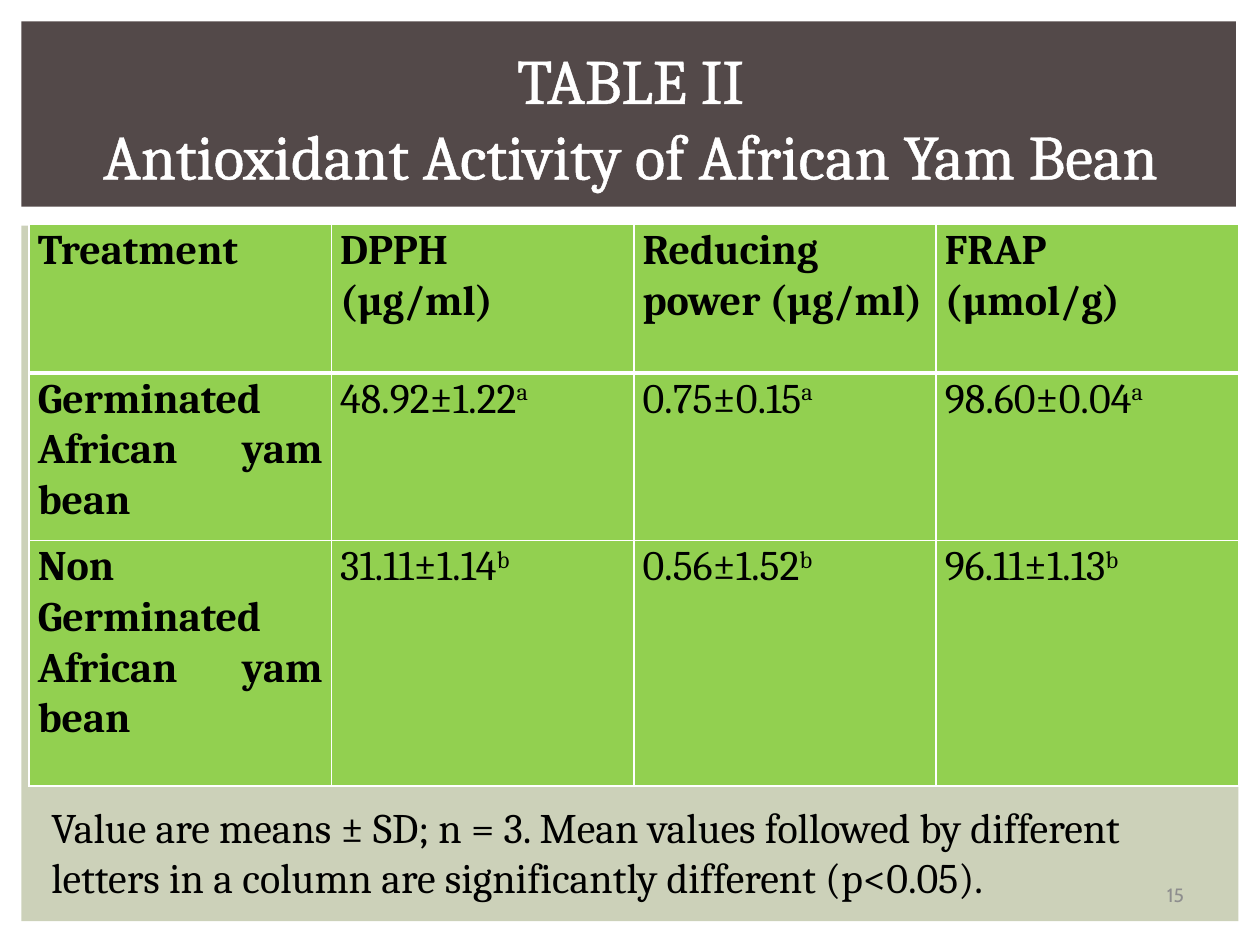
from dataclasses import dataclass

from lxml import etree
from pptx import Presentation
from pptx.dml.color import RGBColor
from pptx.enum.shapes import MSO_SHAPE
from pptx.enum.text import MSO_ANCHOR, PP_ALIGN
from pptx.oxml.ns import qn
from pptx.util import Inches, Pt

RECTANGLE = MSO_SHAPE.RECTANGLE
MIDDLE = MSO_ANCHOR.MIDDLE
CENTER = PP_ALIGN.CENTER
JUSTIFY = PP_ALIGN.JUSTIFY
LEFT = PP_ALIGN.LEFT
TITLE_ONLY = 5


@dataclass(frozen=True)
class Theme:
    panel: str = "CCD1B9"
    banner: str = "534949"
    cell: str = "92D050"
    white: str = "FFFFFF"
    black: str = "000000"
    grey: str = "8E8E8E"
    font: str = "Cambria"
    number_font: str = "Cabin"
    title_size: float = 36
    body_size: float = 24
    number_size: float = 11


THEME = Theme()

# A caret marks the significance letter set as superscript
ROWS = [
    ["Treatment ", "DPPH \n(µg/ml)", "Reducing power (µg/ml)", "FRAP \n(µmol/g)"],
    ["Germinated African yam bean", "48.92±1.22^a", "0.75±0.15^a", "98.60±0.04^a"],
    ["Non Germinated African yam bean", "31.11±1.14^b", "0.56±1.52^b", "96.11±1.13^b"],
]
ROW_HEIGHTS = [1.18, 1.33, 1.95]
COLUMN_WIDTH = 2.4
NOTE = ("Value are means ± SD; n = 3. Mean values followed by different "
        "letters in a column are significantly different (p<0.05).")


def add_line(parent, tag, color, width, index):
    line = etree.Element(qn(tag), w=str(int(Pt(width))))
    fill = etree.SubElement(line, qn("a:solidFill"))
    etree.SubElement(fill, qn("a:srgbClr"), val=color)
    parent.insert(index, line)


def style_span(span, size, color, font=THEME.font, bold=False, outline=None):
    span.font.name = font
    span.font.size = Pt(size)
    span.font.bold = bold
    span.font.color.rgb = RGBColor.from_string(color)
    if outline:
        add_line(span.font._element, "a:ln", color, outline, 0)


def add_panel(page, bounds, color):
    panel = page.shapes.add_shape(RECTANGLE, *map(Inches, bounds))
    panel.shadow.inherit = False
    panel.fill.solid()
    panel.fill.fore_color.rgb = RGBColor.from_string(color)
    panel.line.fill.background()


def place_title(page, bounds, text):
    title = page.shapes.title
    title.left, title.top, title.width, title.height = map(Inches, bounds)
    frame = title.text_frame
    frame.text = text
    frame.vertical_anchor = MIDDLE
    frame.paragraphs[0].alignment = CENTER
    for span in frame.paragraphs[0].runs:
        style_span(span, THEME.title_size, THEME.white, outline=1.45)
    # Bring the title in front of the banner
    page.shapes._spTree.append(title._element)


def add_text(page, bounds, text, size, color, font=THEME.font, align=LEFT, anchor=None):
    box = page.shapes.add_textbox(*map(Inches, bounds))
    frame = box.text_frame
    frame.word_wrap = True
    frame.vertical_anchor = anchor
    frame.text = text
    frame.paragraphs[0].alignment = align
    style_span(frame.paragraphs[0].runs[0], size, color, font)


def fill_cell(cell, text, bold, top_width, bottom_width):
    cell.margin_left = cell.margin_right = Inches(0.07)
    cell.margin_top = cell.margin_bottom = 0
    value, _, letter = text.partition("^")
    cell.text = value
    if letter:
        mark = cell.text_frame.paragraphs[0].add_run()
        mark.text = letter
        mark.font._element.set("baseline", "30000")
    for paragraph in cell.text_frame.paragraphs:
        paragraph.alignment = JUSTIFY
        paragraph.line_spacing = 1.05
        for span in paragraph.runs:
            style_span(span, THEME.body_size, THEME.black, bold=bold, outline=0.75)
    # Borders go before the fill
    properties = cell._tc.get_or_add_tcPr()
    widths = {"a:lnL": 1, "a:lnR": 1, "a:lnT": top_width, "a:lnB": bottom_width}
    for index, (tag, width) in enumerate(widths.items()):
        add_line(properties, tag, THEME.white, width, index)
    cell.fill.solid()
    cell.fill.fore_color.rgb = RGBColor.from_string(THEME.cell)


def add_results_table(page, left, top):
    columns = len(ROWS[0])
    table = page.shapes.add_table(
        len(ROWS), columns, Inches(left), Inches(top),
        Inches(COLUMN_WIDTH * columns), Inches(sum(ROW_HEIGHTS))).table
    for column in table.columns:
        column.width = Inches(COLUMN_WIDTH)
    for r, (texts, height) in enumerate(zip(ROWS, ROW_HEIGHTS)):
        table.rows[r].height = Inches(height)
        for c, text in enumerate(texts):
            fill_cell(table.cell(r, c), text, bold=r == 0 or c == 0,
                      top_width=3 if r == 1 else 1,
                      bottom_width=3 if r == 0 else 1)


def main():
    deck = Presentation()
    deck.slide_width, deck.slide_height = Inches(10), Inches(7.5)
    page = deck.slides.add_slide(deck.slide_layouts[TITLE_ONLY])

    # Background panels and heading
    add_panel(page, (0.17, 1.79, 9.66, 5.52), THEME.panel)
    add_panel(page, (0.17, 0.17, 9.64, 1.47), THEME.banner)
    place_title(page, (0.16, 0.23, 9.69, 1.39),
                "TABLE II\vAntioxidant Activity of African Yam Bean")

    # Results, note and page number
    add_results_table(page, 0.23, 1.78)
    add_text(page, (0.31, 6.31, 9.53, 0.91), NOTE, THEME.body_size, THEME.black)
    add_text(page, (9.01, 6.95, 0.64, 0.3), "15", THEME.number_size, THEME.grey,
             THEME.number_font, CENTER, MIDDLE)

    deck.save("out.pptx")


if __name__ == "__main__":
    main()
